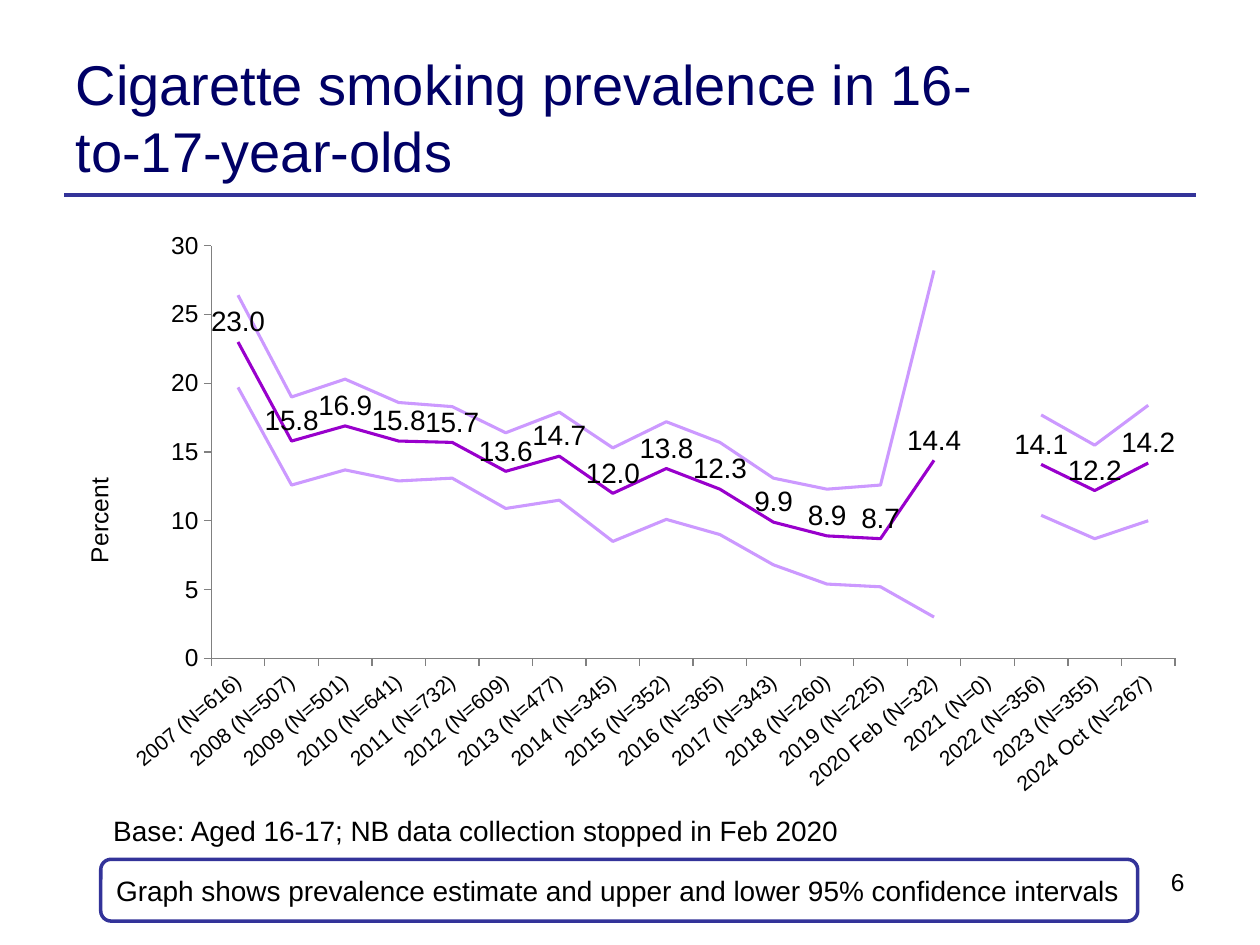
from dataclasses import dataclass

from lxml import etree
from pptx import Presentation
from pptx.chart.data import CategoryChartData
from pptx.dml.color import RGBColor
from pptx.enum.chart import XL_CHART_TYPE, XL_LABEL_POSITION, XL_TICK_MARK
from pptx.enum.shapes import MSO_CONNECTOR, MSO_SHAPE
from pptx.enum.text import MSO_ANCHOR, MSO_AUTO_SIZE, PP_ALIGN
from pptx.oxml import parse_xml
from pptx.oxml.ns import nsdecls, qn
from pptx.util import Inches, Pt

LINE_CHART = XL_CHART_TYPE.LINE
ABOVE = XL_LABEL_POSITION.ABOVE
OUTSIDE = XL_TICK_MARK.OUTSIDE
NO_TICK = XL_TICK_MARK.NONE
STRAIGHT = MSO_CONNECTOR.STRAIGHT
ROUNDED = MSO_SHAPE.ROUNDED_RECTANGLE
TOP, MIDDLE = MSO_ANCHOR.TOP, MSO_ANCHOR.MIDDLE
NO_FIT, GROW = MSO_AUTO_SIZE.NONE, MSO_AUTO_SIZE.SHAPE_TO_FIT_TEXT
LEFT, RIGHT = PP_ALIGN.LEFT, PP_ALIGN.RIGHT


@dataclass(frozen=True)
class Theme:
    """Hold the colours, font and type sizes of the slide."""
    font: str = "Arial"
    ink: RGBColor = RGBColor(0, 0, 0)
    paper: RGBColor = RGBColor(255, 255, 255)
    heading: RGBColor = RGBColor(0x00, 0x00, 0x66)
    rule: RGBColor = RGBColor(0x33, 0x33, 0x99)
    axis: RGBColor = RGBColor(0x80, 0x80, 0x80)
    estimate: RGBColor = RGBColor(0x99, 0x00, 0xCC)
    interval: RGBColor = RGBColor(0xCC, 0x99, 0xFF)
    title_size: Pt = Pt(32)
    body_size: Pt = Pt(16)
    axis_size: Pt = Pt(14)
    category_size: Pt = Pt(12)


THEME = Theme()

CATEGORIES = [
    "2007 (N=616)", "2008 (N=507)", "2009 (N=501)", "2010 (N=641)",
    "2011 (N=732)", "2012 (N=609)", "2013 (N=477)", "2014 (N=345)",
    "2015 (N=352)", "2016 (N=365)", "2017 (N=343)", "2018 (N=260)",
    "2019 (N=225)", "2020 Feb (N=32)", "2021 (N=0)", "2022 (N=356)",
    "2023 (N=355)", "2024 Oct (N=267)",
]
SERIES = [
    ("Series 1", THEME.estimate,
     [23, 15.8, 16.9, 15.8, 15.7, 13.6, 14.7, 12, 13.8, 12.3, 9.9, 8.9, 8.7,
      14.4, None, 14.1, 12.2, 14.2]),
    ("Series 2", THEME.interval,
     [26.4, 19, 20.3, 18.6, 18.3, 16.4, 17.9, 15.3, 17.2, 15.7, 13.1, 12.3,
      12.6, 28.2, None, 17.7, 15.5, 18.4]),
    ("Series 3", THEME.interval,
     [19.7, 12.6, 13.7, 12.9, 13.1, 10.9, 11.5, 8.5, 10.1, 9, 6.8, 5.4, 5.2,
      3, None, 10.4, 8.7, 10]),
]


def format_font(font, size, color=THEME.ink):
    """Apply the theme font with a size and colour."""
    font.name, font.size, font.bold = THEME.font, size, False
    font.color.rgb = color


def write_text(shape, text, size=THEME.body_size, color=THEME.ink,
               align=LEFT, anchor=TOP, wrap=True, fit=NO_FIT):
    """Write one formatted paragraph into a shape."""
    frame = shape.text_frame
    frame.word_wrap, frame.auto_size = wrap, fit
    frame.vertical_anchor = anchor
    para = frame.paragraphs[0]
    para.alignment = align
    span = para.add_run()
    span.text = text
    format_font(span.font, size, color)


def add_heading(page, box, text):
    """Place the title and the rule below it."""
    title = page.shapes.title
    title.left, title.top, title.width, title.height = box
    write_text(title, text, THEME.title_size, THEME.heading, anchor=MIDDLE)
    bottom = box[1] + box[3]
    rule = page.shapes.add_connector(
        STRAIGHT, Inches(0.51), bottom, Inches(9.49), bottom)
    rule.line.color.rgb, rule.line.width = THEME.rule, Pt(2.25)
    etree.SubElement(rule._element.spPr, qn("a:effectLst"))


def make_layout(**fractions):
    """Return a manual chart layout from fractions of the chart area."""
    target = '<c:layoutTarget val="inner"/>' if "w" in fractions else ""
    modes = '<c:xMode val="edge"/><c:yMode val="edge"/>'
    places = "".join(f'<c:{key} val="{value}"/>'
                     for key, value in fractions.items())
    return parse_xml(f'<c:layout {nsdecls("c")}><c:manualLayout>{target}'
                     f'{modes}{places}</c:manualLayout></c:layout>')


def replace_layout(parent, layout, index):
    """Put a manual layout in place of the automatic one."""
    for old in parent.findall(qn("c:layout")):
        parent.remove(old)
    parent.insert(index, layout)


def format_axes(chart):
    """Style both axes and the value axis title."""
    sizes = [(chart.category_axis, THEME.category_size),
             (chart.value_axis, THEME.axis_size)]
    for axis, size in sizes:
        axis.has_major_gridlines = False
        axis.major_tick_mark, axis.minor_tick_mark = OUTSIDE, NO_TICK
        axis.format.line.color.rgb = THEME.axis
        axis.format.line.width = Pt(0.75)
        format_font(axis.tick_labels.font, size)
    labels = chart.category_axis._element.find(qn("c:txPr"))
    labels.find(qn("a:bodyPr")).set("rot", "-2400000")
    values = chart.value_axis
    values.minimum_scale, values.maximum_scale = 0, 30
    values.major_unit = 5
    values.tick_labels.number_format = "0"
    values.tick_labels.number_format_is_linked = False
    frame = values.axis_title.text_frame
    frame.text = "Percent"
    format_font(frame.paragraphs[0].runs[0].font, THEME.axis_size)
    replace_layout(values.axis_title._element, make_layout(x=0.03, y=0.43), 1)


def add_prevalence_chart(page, box):
    """Draw the estimate with its upper and lower limits."""
    data = CategoryChartData()
    data.categories = CATEGORIES
    for name, _, values in SERIES:
        data.add_series(name, values)
    chart = page.shapes.add_chart(LINE_CHART, *box, data).chart
    chart.has_legend = chart.has_title = False
    format_font(chart.font, Pt(18))
    format_axes(chart)
    plot = chart.plots[0]
    plot.vary_by_categories = False
    for series, (_, color, _) in zip(plot.series, SERIES):
        series.smooth = False
        series.format.line.color.rgb = color
        series.format.line.width = Pt(1.75)
    labels = plot.series[0].data_labels
    labels.show_value, labels.position = True, ABOVE
    labels.number_format = "#,##0.0"
    labels.number_format_is_linked = False
    format_font(labels.font, THEME.body_size)
    area = chart._chartSpace.chart.plotArea
    replace_layout(area, make_layout(x=0.145, y=0.043, w=0.836, h=0.703), 0)


def add_note(page, box, text):
    """Place the outlined note."""
    note = page.shapes.add_shape(ROUNDED, *box)
    note.shadow.inherit = False
    note.fill.solid()
    note.fill.fore_color.rgb = THEME.paper
    note.line.color.rgb, note.line.width = THEME.rule, Pt(2)
    write_text(note, text, anchor=MIDDLE)


def add_caption(page, box, text, **text_format):
    """Place a plain line of text."""
    write_text(page.shapes.add_textbox(*box), text, **text_format)


def make_box(*lengths):
    """Return left, top, width and height in inches."""
    return [Inches(length) for length in lengths]


def main():
    """Build and save the slide."""
    deck = Presentation()
    deck.slide_width, deck.slide_height = Inches(10), Inches(7.5)
    page = deck.slides.add_slide(deck.slide_layouts[5])
    add_heading(page, make_box(0.5, 0.3, 7.89, 1.25),
                "Cigarette smoking prevalence in 16-to-17-year-olds")
    add_prevalence_chart(page, make_box(0.35, 1.75, 9.15, 4.66))
    add_caption(page, make_box(6.73, 6.83, 2.77, 0.52), "6",
                size=THEME.axis_size, align=RIGHT)
    add_note(page, make_box(0.8, 6.82, 8.23, 0.49),
             "Graph shows prevalence estimate and upper and lower 95% "
             "confidence intervals")
    add_caption(page, make_box(0.8, 6.41, 6.02, 0.37),
                "Base: Aged 16-17; NB data collection stopped in Feb 2020",
                wrap=False, fit=GROW)
    deck.save("out.pptx")


if __name__ == "__main__":
    main()
